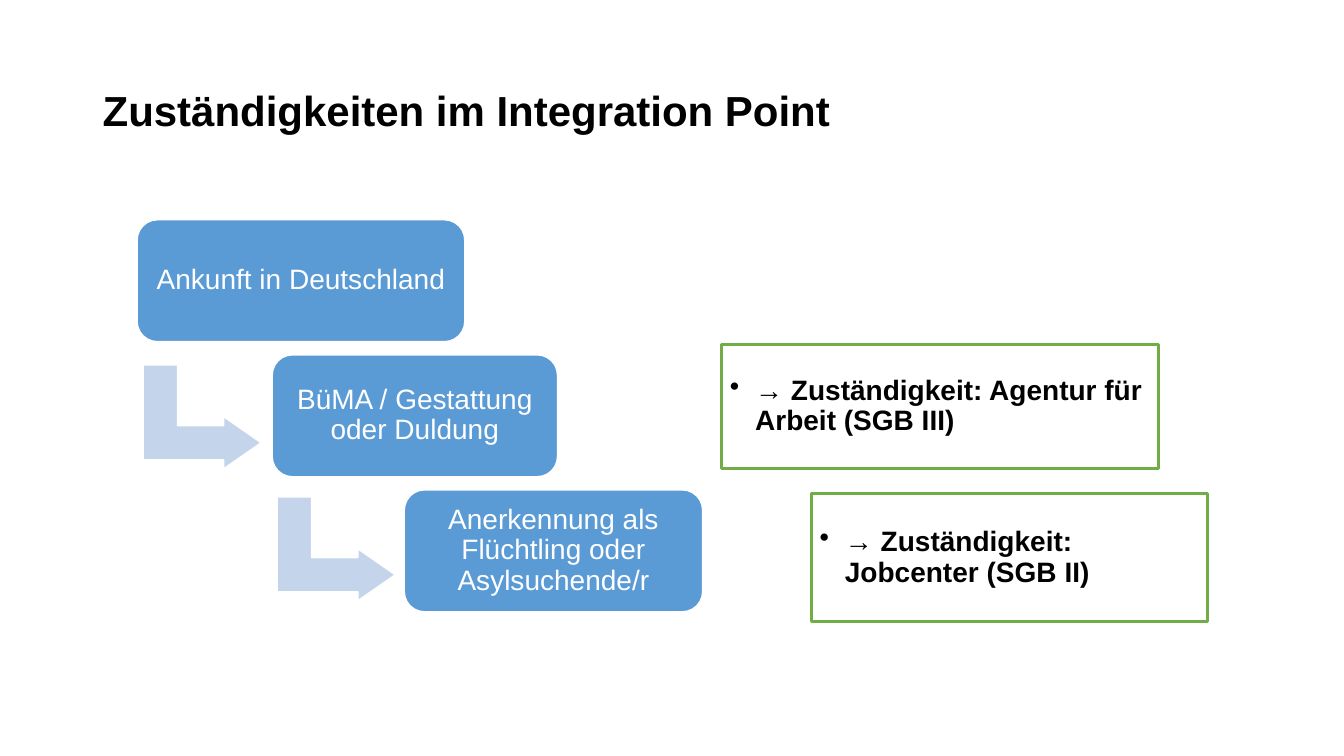
from lxml import etree
from pptx import Presentation
from pptx.dml.color import RGBColor
from pptx.enum import shapes, text
from pptx.oxml.ns import qn
from pptx.util import Inches, Pt

BLACK = RGBColor(0x00, 0x00, 0x00)
WHITE = RGBColor(0xFF, 0xFF, 0xFF)
BLUE = RGBColor(0x5B, 0x9B, 0xD5)
PALE_BLUE = RGBColor(0xC4, 0xD5, 0xEB)
GREEN = RGBColor(0x70, 0xAD, 0x47)
KIND = shapes.MSO_SHAPE


def add_block(kind, box, fill, line, line_width):
    block = slide.shapes.add_shape(kind, *map(Inches, box))
    block.shadow.inherit = False
    block.fill.solid()
    block.fill.fore_color.rgb = fill
    block.line.color.rgb = line
    block.line.width = Pt(line_width)
    return block


def write(block, wording, size, color, bold, align, inset):
    frame = block.text_frame
    frame.word_wrap = True
    frame.vertical_anchor = text.MSO_ANCHOR.MIDDLE
    for side, margin in inset.items():
        setattr(frame, f"margin_{side}", Inches(margin))
    paragraph = frame.paragraphs[0]
    paragraph.alignment = align
    paragraph.line_spacing = 0.9
    run = paragraph.add_run()
    run.text = wording
    run.font.name = "Arial"
    run.font.size = Pt(size)
    run.font.bold = bold
    run.font.color.rgb = color
    return paragraph


deck = Presentation()
deck.slide_width, deck.slide_height = Inches(13.33), Inches(7.5)
slide = deck.slides.add_slide(deck.slide_layouts[6])

title = slide.shapes.add_textbox(*map(Inches, (0.92, 0.4, 11.5, 1.45)))
write(title, "Zuständigkeiten im Integration Point", 30, BLACK, True,
      text.PP_ALIGN.LEFT, {"left": 0.1, "right": 0.1, "top": 0.05, "bottom": 0.05})

BLOCK_INSET = dict.fromkeys(("left", "right", "top", "bottom"), 0.08)

# Arrows leading from each step down to the next
for left, top in ((1.49, 3.55), (2.82, 4.86)):
    arrow = add_block(KIND.BENT_UP_ARROW, (left, top, 1.03, 1.17), PALE_BLUE, WHITE, 1)
    arrow.rotation = 90
    for index, value in enumerate((0.33, 0.25, 0.36)):
        arrow.adjustments[index] = value

# Staircase of steps
STEP_TOP, STEP_HEIGHT, STEP_PITCH = 2.18, 1.21, 1.34
steps = (
    (1.36, 3.25, "Ankunft in Deutschland"),
    (2.7, 2.83, "BüMA / Gestattung oder Duldung"),
    (4.01, 2.96, "Anerkennung als Flüchtling oder Asylsuchende/r"),
)
for row, (left, width, wording) in enumerate(steps):
    box = (left, STEP_TOP + row * STEP_PITCH, width, STEP_HEIGHT)
    step = add_block(KIND.ROUNDED_RECTANGLE, box, BLUE, WHITE, 1)
    write(step, wording, 20, WHITE, False, text.PP_ALIGN.CENTER, BLOCK_INSET)

# Responsible office beside the second and third step
offices = (
    ((7.16, 3.42, 4.33, 1.23), "→ Zuständigkeit: Agentur für Arbeit (SGB III)"),
    ((8.05, 4.9, 3.93, 1.27), "→ Zuständigkeit: Jobcenter (SGB II)"),
)
for box, wording in offices:
    office = add_block(KIND.RECTANGLE, box, WHITE, GREEN, 2.25)
    paragraph = write(office, wording, 20, BLACK, True, text.PP_ALIGN.LEFT, BLOCK_INSET)
    properties = paragraph._p.get_or_add_pPr()
    properties.set("marL", str(Inches(0.25)))
    properties.set("indent", str(Inches(-0.25)))
    etree.SubElement(properties, qn("a:buChar")).set("char", "•")

deck.save("out.pptx")
